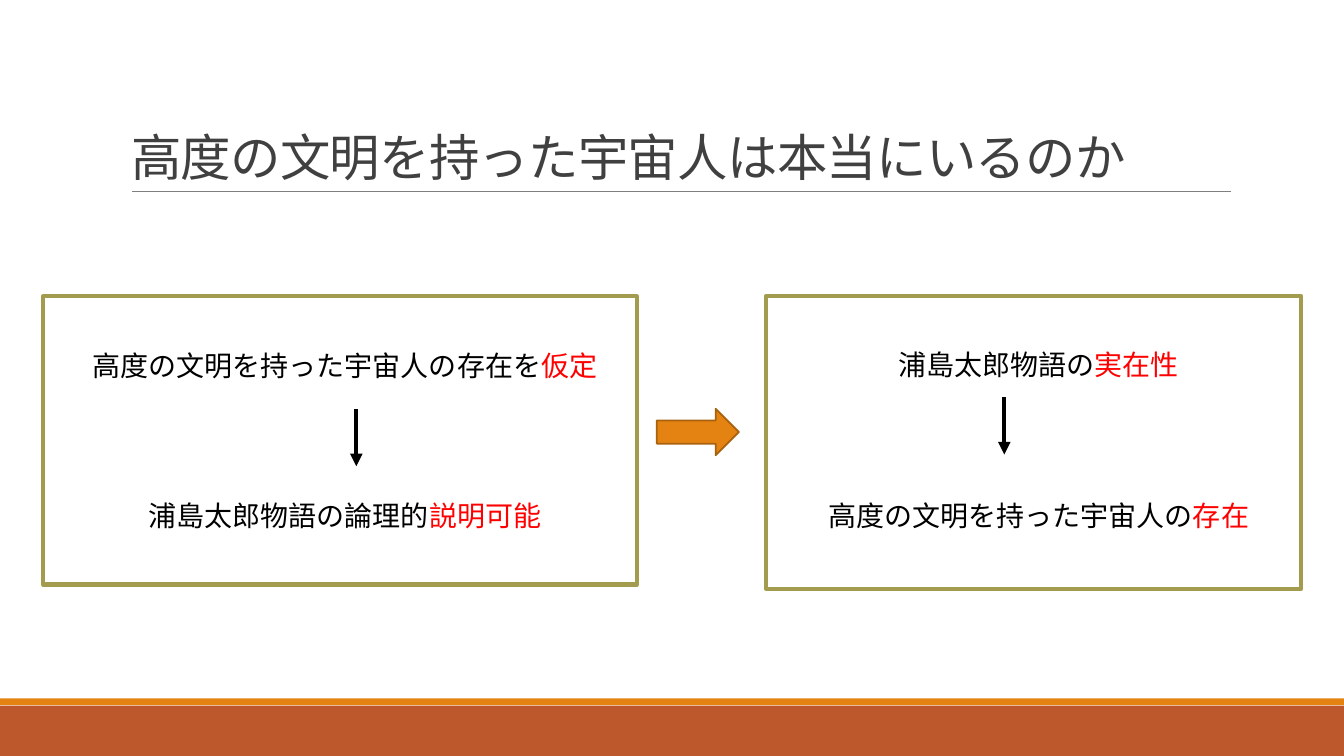
from dataclasses import dataclass

from pptx import Presentation
from pptx.dml.color import RGBColor
from pptx.enum.shapes import MSO_CONNECTOR, MSO_SHAPE
from pptx.enum.text import MSO_ANCHOR, MSO_AUTO_SIZE, PP_ALIGN
from pptx.oxml.ns import qn
from pptx.util import Pt

RECTANGLE = MSO_SHAPE.RECTANGLE
RIGHT_ARROW = MSO_SHAPE.RIGHT_ARROW
STRAIGHT = MSO_CONNECTOR.STRAIGHT
CENTER, LEFT = PP_ALIGN.CENTER, PP_ALIGN.LEFT
TOP, BOTTOM = MSO_ANCHOR.TOP, MSO_ANCHOR.BOTTOM
NO_AUTOFIT = MSO_AUTO_SIZE.NONE

SLIDE_WIDTH, SLIDE_HEIGHT = 960, 540


@dataclass(frozen=True)
class Theme:
    font: str = "Calibri"
    title_size: float = 36
    body_size: float = 20
    title: str = "404040"
    text: str = "000000"
    emphasis: str = "FF0000"
    background: str = "FFFFFF"
    frame: str = "A39B4E"
    rule: str = "808080"
    orange: str = "E48312"
    orange_edge: str = "A9610D"
    rust: str = "BD582C"


THEME = Theme()


def color(value):
    return RGBColor.from_string(value)


def place(shape, left, top, width, height):
    shape.left, shape.top = Pt(left), Pt(top)
    shape.width, shape.height = Pt(width), Pt(height)


def set_outline(shape, line_color, width):
    shape.line.color.rgb = color(line_color)
    shape.line.width = Pt(width)


def add_run(paragraph, text, size, text_color):
    run = paragraph.add_run()
    run.text = text
    run.font.name = THEME.font
    run.font.size = Pt(size)
    run.font.color.rgb = color(text_color)
    return run


def add_block(slide, kind, left, top, width, height, fill=None):
    shape = slide.shapes.add_shape(kind, Pt(left), Pt(top), Pt(width), Pt(height))
    shape.shadow.inherit = False
    shape.line.fill.background()
    if fill:
        shape.fill.solid()
        shape.fill.fore_color.rgb = color(fill)
    else:
        shape.fill.background()
    return shape


def add_line(slide, start, end, line_color, width, arrow=False):
    line = slide.shapes.add_connector(STRAIGHT, *map(Pt, start + end))
    set_outline(line, line_color, width)
    properties = line._element.spPr
    if arrow:
        tail = properties.find(qn("a:ln")).makeelement(qn("a:tailEnd"), {"type": "triangle"})
        properties.find(qn("a:ln")).append(tail)
    properties.append(properties.makeelement(qn("a:effectLst"), {}))


def set_frame(frame, anchor, margins):
    frame.word_wrap = True
    frame.auto_size = NO_AUTOFIT
    frame.vertical_anchor = anchor
    frame.margin_left, frame.margin_top, frame.margin_right, frame.margin_bottom = map(Pt, margins)


def fill_title(title, text):
    place(title, 86.4, 22.3, 792, 114.5)
    set_frame(title.text_frame, BOTTOM, (7.2, 3.6, 7.2, 3.6))
    paragraph = title.text_frame.paragraphs[0]
    paragraph.alignment = LEFT
    paragraph.line_spacing = 0.85
    run = add_run(paragraph, text, THEME.title_size, THEME.title)
    run.font._element.set("spc", "-50")


def fill_argument(box, statements):
    """Write premise and conclusion, each ending in an emphasised word."""
    set_outline(box, THEME.frame, 3)
    frame = box.text_frame
    set_frame(frame, TOP, (7.2, 39.6, 0, 3.6))
    for index, (lead, emphasis) in enumerate(statements):
        paragraph = frame.add_paragraph() if index else frame.paragraphs[0]
        paragraph.alignment = CENTER
        paragraph.line_spacing = 0.9
        paragraph.space_before = Pt(84 if index else 0)
        paragraph.space_after = Pt(2)
        # No bullet and no hanging indent
        properties = paragraph._p.get_or_add_pPr()
        properties.set("marL", "0")
        properties.set("indent", "0")
        properties.append(properties.makeelement(qn("a:buNone"), {}))
        add_run(paragraph, lead, THEME.body_size, THEME.text)
        add_run(paragraph, emphasis, THEME.body_size, THEME.emphasis)


def main():
    presentation = Presentation()
    presentation.slide_width, presentation.slide_height = Pt(SLIDE_WIDTH), Pt(SLIDE_HEIGHT)
    slide = presentation.slides.add_slide(presentation.slide_layouts[1])

    # Footer bands and title rule
    add_block(slide, RECTANGLE, 0, 504, SLIDE_WIDTH, 36, THEME.rust)
    add_block(slide, RECTANGLE, 0, 498.8, SLIDE_WIDTH, 5, THEME.orange)
    add_line(slide, (94.3, 136.8), (879, 136.8), THEME.rule, 0.5)
    fill_title(slide.shapes.title, "高度の文明を持った宇宙人は本当にいるのか")

    # Left argument: from assumption to explanation
    assumption = slide.placeholders[1]
    place(assumption, 30.8, 211.7, 424, 205.9)
    assumption.fill.solid()
    assumption.fill.fore_color.rgb = color(THEME.background)
    fill_argument(assumption, [
        ("高度の文明を持った宇宙人の存在を", "仮定"),
        ("浦島太郎物語の論理的", "説明可能"),
    ])

    # Right argument: from reality to existence
    reality = add_block(slide, RECTANGLE, 547.2, 211.7, 382.4, 208.8)
    fill_argument(reality, [
        ("浦島太郎物語の", "実在性"),
        ("高度の文明を持った宇宙人の", "存在"),
    ])

    # Arrows within and between the arguments
    for x, top in ((254.5, 292), (717.4, 283.7)):
        add_line(slide, (x, top), (x, top + 41), THEME.text, 3, arrow=True)
    step = add_block(slide, RIGHT_ARROW, 469.2, 292, 58.6, 33.2, THEME.orange)
    set_outline(step, THEME.orange_edge, 1.25)

    presentation.save("out.pptx")


if __name__ == "__main__":
    main()
